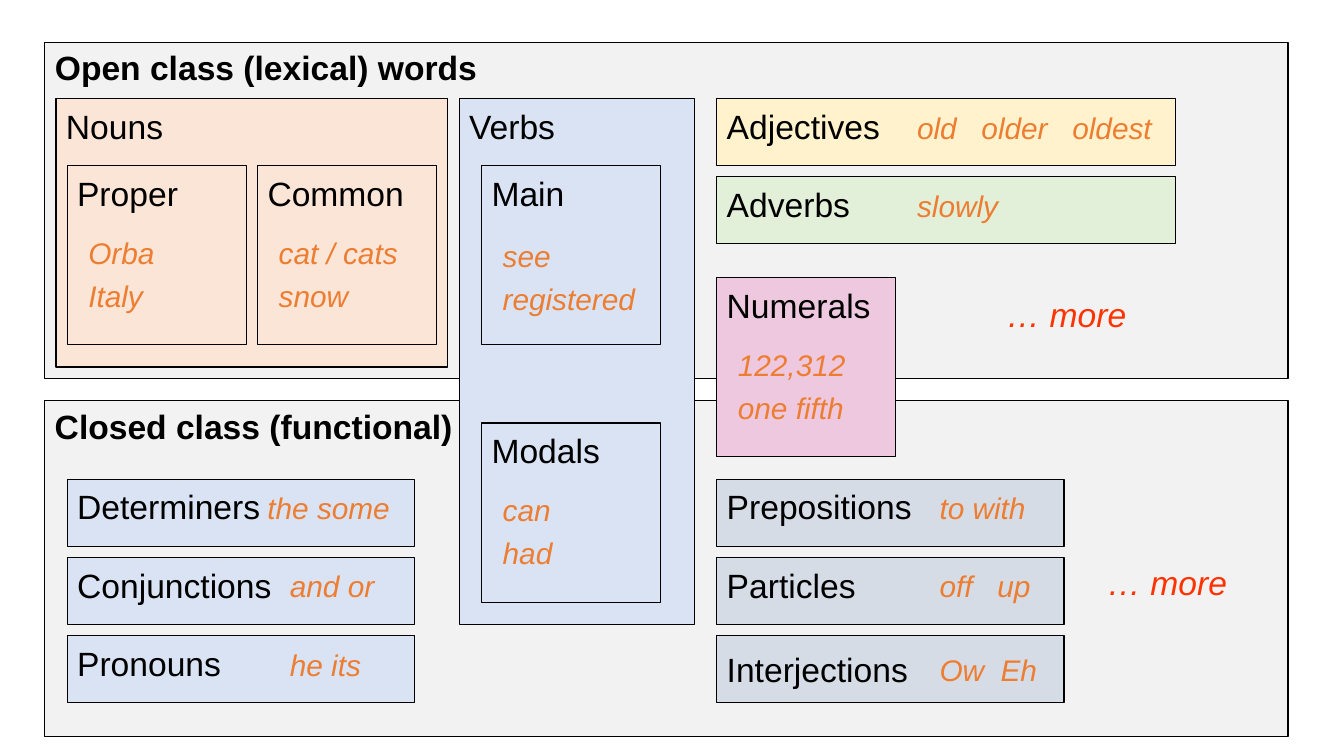
from pptx import Presentation
from pptx import util as u
from pptx.dml import color
from pptx.enum import shapes, text

COLORS = {
    "panel": "F2F2F2", "noun": "FBE5D6", "blue": "DAE3F3", "adjective": "FFF2CC",
    "adverb": "E2F0D9", "numeral": "EDC8DE", "grey": "D6DCE5",
    "black": "000000", "orange": "ED7D31", "red": "FF3300",
}
FONT = "Arial"
WIDTH, HEIGHT = 13.33, 7.5
UNIT = WIDTH / 120
TOP = 0.42
LABEL_DROP = 0.2

# name, row, label columns
PANELS = [
    ("Open class (lexical) words", 0, 43),
    ("Closed class (functional)", 32, 48),
]
# name, column, row, columns, rows, fill, label columns
CLASSES = [
    ("Nouns", 5, 5, 35, 24, "noun", 19),
    ("Verbs", 41, 5, 21, 47, "blue", 23),
    ("Proper", 6, 11, 16, 16, None, 14),
    ("Common", 23, 11, 16, 16, None, 18),
    ("Modals", 43, 34, 16, 16, None, 14),
    ("Main", 43, 11, 16, 16, None, 14),
    ("Adjectives", 64, 5, 41, 6, "adjective", 23),
    ("Adverbs", 64, 12, 41, 6, "adverb", 23),
    ("Prepositions", 64, 39, 31, 6, "grey", 23),
    ("Particles", 64, 46, 31, 6, "grey", 23),
    ("Determiners", 6, 39, 31, 6, "blue", 23),
    ("Conjunctions", 6, 46, 31, 6, "blue", 23),
    ("Pronouns", 6, 53, 31, 6, "blue", 23),
    ("Numerals", 64, 21, 16, 16, "numeral", 15),
    ("Interjections", 64, 53, 31, 6, "grey", None),
]
# words, column, row, columns
EXAMPLES = [
    ("Orba\nItaly", 7, 16.75, 14),
    ("cat / cats\nsnow", 24, 16.75, 14),
    ("see\nregistered", 44, 17, 15),
    ("can\nhad", 44, 39.7, 15),
    ("old   older   oldest", 81, 5.6, 26),
    ("slowly", 81, 12.5, 15),
    ("to with", 83, 39.5, 15),
    ("off   up", 83, 46.5, 15),
    ("the some", 23, 39.5, 15),
    ("and or", 25, 46.5, 15),
    ("he its", 25, 53.5, 15),
    ("122,312\none fifth", 65, 26.75, 15),
    ("Ow  Eh", 83, 54, 15),
]
# column, row, columns
MORE = [(89, 22, 19), (98, 46, 15)]


def rgb(name):
    return color.RGBColor.from_string(COLORS[name])


def place(column, row, columns, height):
    return [u.Inches(n) for n in (column * UNIT, TOP + row * UNIT, columns * UNIT, height)]


def write(box, words, size=24, tint="black", bold=False, italic=False):
    frame = box.text_frame
    frame.text = words
    for index, para in enumerate(frame.paragraphs):
        para.alignment = text.PP_ALIGN.LEFT
        para.space_before = u.Pt(5 if index else 0)
        for span in para.runs:
            font = span.font
            font.name, font.size = FONT, u.Pt(size)
            font.bold, font.italic = bold, italic
            font.color.rgb = rgb(tint)
    return frame


def add_text(column, row, columns, words, height=0.5, **style):
    box = page.shapes.add_textbox(*place(column, row, columns, height))
    write(box, words, **style).word_wrap = True


def add_box(column, row, columns, rows, fill):
    box = page.shapes.add_shape(
        shapes.MSO_SHAPE.RECTANGLE, *place(column, row, columns, rows * UNIT))
    box.shadow.inherit = False
    if fill:
        box.fill.solid()
        box.fill.fore_color.rgb = rgb(fill)
    else:
        box.fill.background()
    box.line.color.rgb = rgb("black")
    box.line.width = u.Pt(0.75)
    return box


deck = Presentation()
deck.slide_width, deck.slide_height = u.Inches(WIDTH), u.Inches(HEIGHT)
page = deck.slides.add_slide(deck.slide_layouts[5])

for name, row, columns in PANELS:
    add_box(4, row, 111, 30, "panel")

(title_name, title_row, title_columns), (name, row, columns) = PANELS
title = page.shapes.title
title.left, title.top, title.width, title.height = place(4, title_row, title_columns, 0.5)
frame = write(title, title_name, bold=True)
frame.vertical_anchor = text.MSO_ANCHOR.TOP
frame.auto_size = text.MSO_AUTO_SIZE.NONE
page.shapes._spTree.append(title._element)
add_text(4, row, columns, name, bold=True)

for name, column, row, columns, rows, fill, label_columns in CLASSES:
    box = add_box(column, row, columns, rows, fill)
    if label_columns:
        add_text(column, row + LABEL_DROP, label_columns, name)
    else:
        write(box, name).vertical_anchor = text.MSO_ANCHOR.MIDDLE

for words, column, row, columns in EXAMPLES:
    height = 0.46 + 0.43 * words.count("\n")
    add_text(column, row, columns, words, height, size=21.3, tint="orange", italic=True)

for column, row, columns in MORE:
    add_text(column, row, columns, "… more", tint="red", italic=True)

deck.save("out.pptx")
